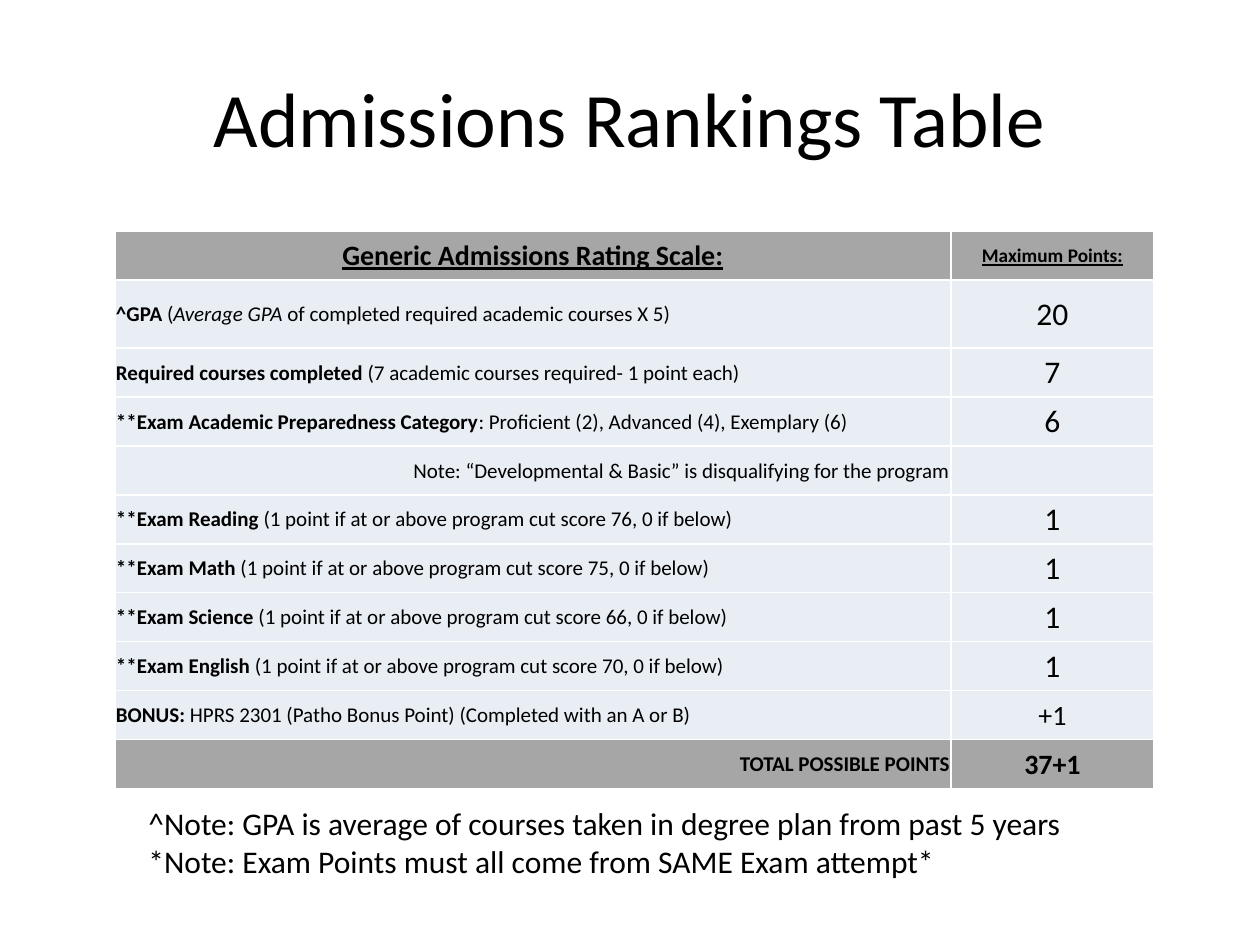
from pptx import Presentation
from pptx.dml.color import RGBColor
from pptx.enum.text import MSO_ANCHOR as Anchor, PP_ALIGN as Align
from pptx.util import Emu, Pt


def px(*nums):
    return [Emu(round(n * 914400 / 126)) for n in nums]


def style(para, size, align=Align.LEFT):
    para.alignment = align
    font = para.font
    font.name = "Calibri"
    font.size = Pt(size)
    font.color.rgb = RGBColor.from_string("000000")
    return font


deck = Presentation()
deck.slide_width, deck.slide_height = px(1260, 945)
slide = deck.slides.add_slide(deck.slide_layouts[5])

title = slide.shapes.title
title.left, title.top, title.width, title.height = px(63, 38, 1134, 158)
title.text_frame.text = "Admissions Rankings Table"
title.text_frame.vertical_anchor = Anchor.MIDDLE
style(title.text_frame.paragraphs[0], 44, Align.CENTER)

rows = [
    ("Generic Admissions Rating Scale:", "", "Maximum Points:", 11),
    ("^GPA ", "(|Average GPA |of completed required academic courses X 5)", "20", 18),
    ("Required courses completed ", "(7 academic courses required- 1 point each)", "7", 18),
    ("**Exam Academic Preparedness Category", ": Proficient (2), Advanced (4), Exemplary (6)", "6", 18),
    ("", "Note: “Developmental & Basic” is disqualifying for the program", "", 18),
]
for name, score in [("Reading", 76), ("Math", 75), ("Science", 66), ("English", 70)]:
    rows.append((f"**Exam {name} ", f"(1 point if at or above program cut score {score}, 0 if below)", "1", 18))
rows += [
    ("BONUS: ", "HPRS 2301 (Patho Bonus Point) (Completed with an A or B)", "+1", 16),
    ("TOTAL POSSIBLE POINTS", "", "37+1", 16),
]
last = len(rows) - 1

table = slide.shapes.add_table(len(rows), 2, *px(115, 231, 1039, 558)).table
table.first_row = table.horz_banding = False
for col, width in zip(table.columns, px(836, 203)):
    col.width = width

for i, (lead, rest, points, size) in enumerate(rows):
    table.rows[i].height = px(68 if i == 1 else 49)[0]
    band = i in (0, last)
    for cell in table.rows[i].cells:
        cell.fill.solid()
        cell.fill.fore_color.rgb = RGBColor.from_string("A6A6A6" if band else "E9EDF4")
        cell.vertical_anchor = Anchor.MIDDLE
        cell.margin_left, cell.margin_right, cell.margin_top, cell.margin_bottom = px(1, 1, 1, 0)
    label, value = [cell.text_frame.paragraphs[0] for cell in table.rows[i].cells]

    align = Align.CENTER if i == 0 else Align.RIGHT if i in (4, last) else Align.LEFT
    font = style(label, 16 if i == 0 else 12, align)
    font.underline = i == 0
    if lead:
        run = label.add_run()
        run.text = lead
        run.font.bold = True
    for j, part in enumerate(rest.split("|") if rest else []):
        run = label.add_run()
        run.text = part
        run.font.bold = False
        run.font.italic = j == 1

    value.text = points
    font = style(value, size, Align.CENTER)
    font.bold = band
    font.underline = i == 0

notes = slide.shapes.add_textbox(*px(136, 798, 987, 89)).text_frame
notes.word_wrap = True
notes.text = (
    "^Note: GPA is average of courses taken in degree plan from past 5 years\n"
    "*Note: Exam Points must all come from SAME Exam attempt*"
)
for para in notes.paragraphs:
    style(para, 18)

deck.save("out.pptx")
